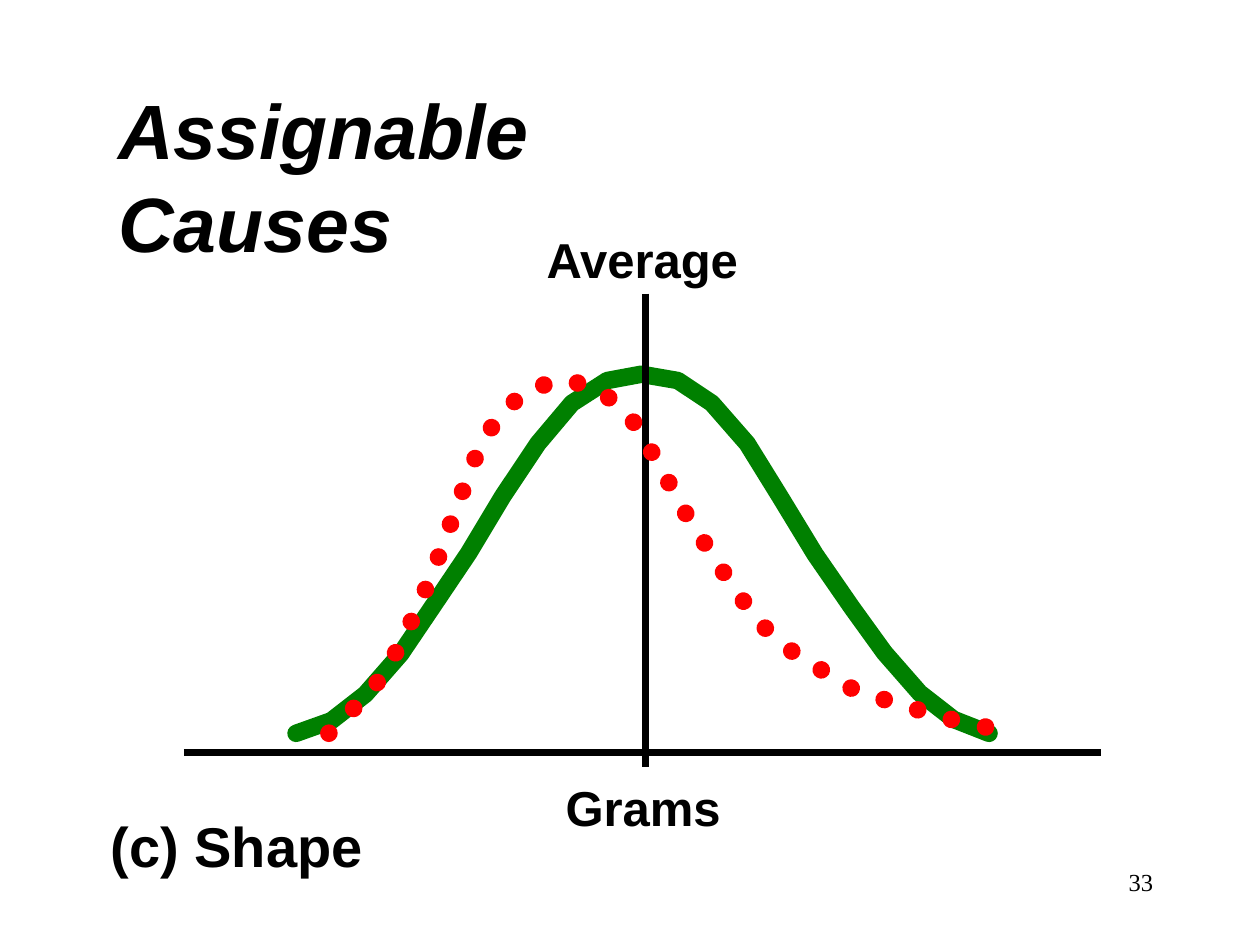
from dataclasses import dataclass

from pptx import Presentation
from pptx import util as u
from pptx.dml.color import RGBColor
from pptx.enum import dml, shapes, text
from pptx.oxml.ns import qn
from pptx.oxml.xmlchemy import OxmlElement


@dataclass(frozen=True)
class Theme:
    ink = RGBColor(0, 0, 0)
    normal = RGBColor(0, 0x80, 0)
    skewed = RGBColor(0xFF, 0, 0)
    heading_font = "Arial"
    number_font = "Times New Roman"
    title_size = u.Pt(44)
    caption_size = u.Pt(32)
    label_size = u.Pt(28)
    number_size = u.Pt(14)
    curve_width = u.Pt(10)
    axis_width = u.Pt(4)


theme = Theme()
deck = Presentation()
deck.slide_width, deck.slide_height = u.Inches(10), u.Inches(7.5)
page = deck.slides.add_slide(deck.slide_layouts[6])


def add_label(words, place, size, wrap=False, italic=None, bold=True,
              font=theme.heading_font, align=text.PP_ALIGN.LEFT):
    box = page.shapes.add_textbox(*map(u.Inches, place))
    box.text_frame.word_wrap = wrap
    para = box.text_frame.paragraphs[0]
    para.text = words
    para.alignment = align
    para.font.name, para.font.size = font, size
    para.font.bold, para.font.italic = bold, italic
    para.font.color.rgb = theme.ink


def add_curve(points, color, dash=None):
    start, *rest = [(u.Inches(x), u.Inches(y)) for x, y in points]
    builder = page.shapes.build_freeform(*start)
    builder.add_line_segments(rest, close=False)
    curve = builder.convert_to_shape()
    curve.shadow.inherit = False
    curve.fill.background()
    curve.line.color.rgb = color
    curve.line.width = theme.curve_width
    curve.line.dash_style = dash
    curve._element.spPr.find(qn("a:ln")).set("cap", "rnd")


normal_points = [
    (2.35, 5.82), (2.63, 5.72), (2.9, 5.51), (3.18, 5.19), (3.43, 4.82),
    (3.72, 4.39), (3.99, 3.94), (4.27, 3.52), (4.54, 3.2), (4.82, 3.02),
    (5.09, 2.97), (5.38, 3.02), (5.65, 3.2), (5.93, 3.52), (6.19, 3.94),
    (6.47, 4.4), (6.76, 4.82), (7.02, 5.18), (7.3, 5.5), (7.57, 5.71),
    (7.85, 5.82),
]
skewed_points = [
    (2.61, 5.82), (2.81, 5.62), (2.98, 5.44), (3.19, 5.1), (3.43, 4.56),
    (3.59, 4.12), (3.76, 3.66), (3.93, 3.34), (4.18, 3.09), (4.5, 3.01),
    (4.78, 3.11), (5.01, 3.32), (5.21, 3.65), (5.44, 4.07), (5.7, 4.48),
    (6.01, 4.93), (6.31, 5.19), (6.77, 5.47), (7.13, 5.59), (7.62, 5.73),
    (8.02, 5.81),
]

add_label("33", (7.17, 6.83, 2.08, 0.5), theme.number_size, wrap=True, bold=False,
          font=theme.number_font, align=text.PP_ALIGN.RIGHT)
add_label("Assignable Causes", (0.84, 0.61, 5.5, 0.83), theme.title_size,
          wrap=True, italic=True)
add_label("(c) Shape", (0.78, 6.39, 2.21, 0.64), theme.caption_size)

add_curve(normal_points, theme.normal)

for ends in [(1.46, 5.97, 8.74, 5.97), (5.12, 2.33, 5.12, 6.09)]:
    axis = page.shapes.add_connector(shapes.MSO_CONNECTOR.STRAIGHT, *map(u.Inches, ends))
    axis.line.color.rgb = theme.ink
    axis.line.width = theme.axis_width
    axis._element.spPr.append(OxmlElement("a:effectLst"))

add_label("Grams", (4.39, 6.12, 1.44, 0.58), theme.label_size)
add_label("Average", (4.24, 1.77, 1.75, 0.58), theme.label_size)

add_curve(skewed_points, theme.skewed, dml.MSO_LINE.ROUND_DOT)

deck.save("out.pptx")
